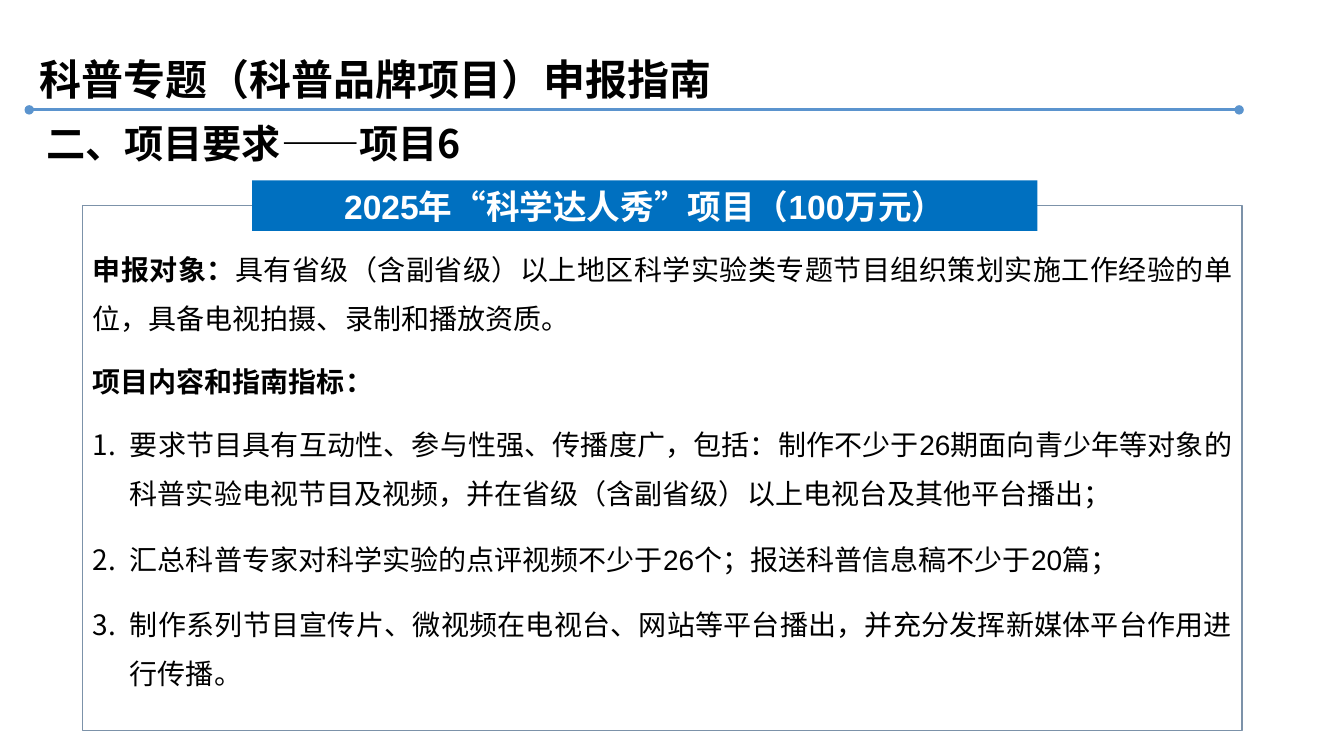
from pptx import Presentation
from pptx.dml.color import RGBColor
from pptx.enum.shapes import MSO_CONNECTOR as Link, MSO_SHAPE as Preset
from pptx.enum.text import MSO_ANCHOR as Anchor, MSO_AUTO_SIZE as Fit, PP_ALIGN as Align
from pptx.oxml.ns import qn
from pptx.util import Inches, Pt
from lxml.etree import SubElement

LATIN, HAN = "Arial", "Noto Sans CJK SC"
BLACK, WHITE, RULE, BANNER, FRAME = "000000", "FFFFFF", "5B94CE", "0070C0", "7C92A9"

AUDIENCE = [
    ("申报对象：", True),
    ("具有省级（含副省级）以上地区科学实验类专题节目组织策划实施工作经验的单位，具备电视拍摄、录制和播放资质。", False),
]
CONTENT_HEADING = [("项目内容和指南指标：", True)]
INDICATORS = [
    "要求节目具有互动性、参与性强、传播度广，包括：制作不少于26期面向青少年等对象的科普实验电视节目及视频，并在省级（含副省级）以上电视台及其他平台播出；",
    "汇总科普专家对科学实验的点评视频不少于26个；报送科普信息稿不少于20篇；",
    "制作系列节目宣传片、微视频在电视台、网站等平台播出，并充分发挥新媒体平台作用进行传播。",
]


def colour(code):
    """Turn a hex string into a colour."""
    return RGBColor.from_string(code)


class GuideSlide:
    """Draw on one slide, measured in grid columns and rows of a tenth of an inch."""

    def __init__(self, deck):
        self.slide = deck.slides.add_slide(deck.slide_layouts[5])
        self.shapes = self.slide.shapes

    def grid(self, *cells):
        """Convert columns and rows into lengths."""
        return [Inches(cell / 10) for cell in cells]

    def style(self, run, size, bold, code=BLACK, latin=LATIN):
        """Format a run in both scripts."""
        run.font.size, run.font.bold, run.font.name = Pt(size), bold, latin
        run.font.color.rgb = colour(code)
        SubElement(run.font._element, qn("a:ea"), typeface=HAN)

    def heading(self, holder, area, text, size, latin=LATIN):
        """Place a bold one-line heading in a title or text box."""
        holder.left, holder.top, holder.width, holder.height = self.grid(*area)
        frame = holder.text_frame
        frame.word_wrap, frame.auto_size = True, Fit.SHAPE_TO_FIT_TEXT
        frame.vertical_anchor = Anchor.TOP
        frame.text = text
        line = frame.paragraphs[0]
        line.alignment, line.line_spacing = Align.LEFT, 1.5
        self.style(line.runs[0], size, True, latin=latin)

    def title(self, area, text, size):
        """Fill the title placeholder."""
        self.heading(self.shapes.title, area, text, size)

    def subtitle(self, area, text, size):
        """Add the section heading."""
        self.heading(self.shapes.add_textbox(*self.grid(*area)), area, text, size, HAN)

    def rule(self, ends):
        """Add a line with a dot at each end."""
        rule = self.shapes.add_connector(Link.STRAIGHT, *self.grid(*ends))
        rule.line.color.rgb, rule.line.width = colour(RULE), Pt(2.25)
        outline = rule.line._get_or_add_ln()
        for end in ("a:headEnd", "a:tailEnd"):
            SubElement(outline, qn(end), type="oval")
        SubElement(rule._element.spPr, qn("a:effectLst"))

    def box(self, area, fill, border=None):
        """Add a flat rectangle."""
        box = self.shapes.add_shape(Preset.RECTANGLE, *self.grid(*area))
        box.shadow.inherit = False
        box.fill.solid()
        box.fill.fore_color.rgb = colour(fill)
        if border:
            box.line.color.rgb, box.line.width = colour(border), Pt(1)
        else:
            box.line.fill.background()
        return box

    def banner(self, area, text, size):
        """Add a filled bar with a centred caption."""
        frame = self.box(area, BANNER).text_frame
        frame.word_wrap = True
        frame.text = text
        caption = frame.paragraphs[0]
        caption.alignment = Align.CENTER
        self.style(caption.runs[0], size, True, WHITE)

    def body(self, area):
        """Add an empty wrapping text box and return its frame."""
        frame = self.shapes.add_textbox(*self.grid(*area)).text_frame
        frame.word_wrap = True
        return frame

    def paragraph(self, frame, pieces, gap=6, numbered=False):
        """Append a justified paragraph, numbered on request."""
        first = not frame.text
        line = frame.paragraphs[0] if first else frame.add_paragraph()
        line.alignment, line.line_spacing = Align.JUSTIFY, Pt(35)
        line.space_before, line.space_after = Pt(0 if first else gap), Pt(gap)
        if numbered:
            layout = line._p.get_or_add_pPr()
            indent = Inches(0.37)
            layout.set("marL", str(indent))
            layout.set("indent", str(-indent))
            SubElement(layout, qn("a:buFont"), typeface=HAN)
            SubElement(layout, qn("a:buAutoNum"), type="arabicPeriod")
        for text, bold in pieces:
            run = line.add_run()
            run.text = text
            self.style(run, 20, bold)


def main():
    """Build and save the slide."""
    deck = Presentation()
    deck.slide_width, deck.slide_height = Inches(13.33), Inches(7.5)
    guide = GuideSlide(deck)
    guide.rule((2.9, 10.9, 122.9, 10.9))
    guide.box((8.2, 20.4, 115, 52.1), WHITE, FRAME)
    guide.banner((25, 17.9, 77.9, 5), "2025年“科学达人秀”项目（100万元）", 24)
    requirements = guide.body((8.2, 23, 115, 34.3))
    guide.paragraph(requirements, AUDIENCE)
    guide.paragraph(requirements, CONTENT_HEADING, gap=4)
    for indicator in INDICATORS:
        guide.paragraph(requirements, [(indicator, False)], numbered=True)
    guide.subtitle((3.6, 9, 106.9, 7.2), "二、项目要求——项目6", 28)
    guide.title((2.9, 2.3, 106.9, 7.7), "科普专题（科普品牌项目）申报指南", 30)
    deck.save("out.pptx")


if __name__ == "__main__":
    main()
